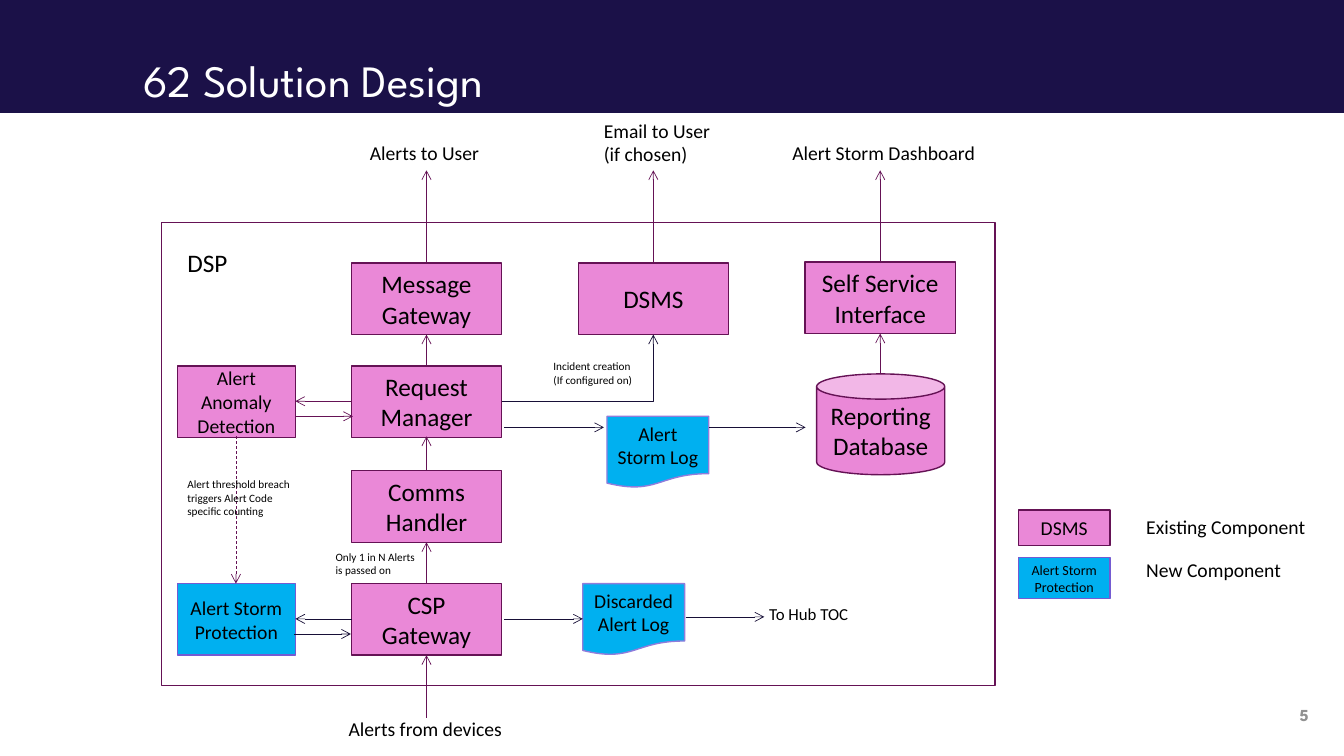
import pptx
import pptx.util
import pptx.dml.color
import pptx.enum.dml
import pptx.enum.shapes
import pptx.enum.text
import pptx.oxml
import pptx.oxml.ns
from dataclasses import dataclass

Inches = pptx.util.Inches
Shape = pptx.enum.shapes.MSO_SHAPE
Anchor = pptx.enum.text.MSO_ANCHOR
Align = pptx.enum.text.PP_ALIGN


@dataclass(frozen=True)
class Theme:
    heading: str = "League Spartan"
    body: str = "Calibri"
    banner: str = "1B1148"
    white: str = "FFFFFF"
    black: str = "000000"
    grey: str = "919191"
    existing: str = "EA88D7"
    new: str = "00B0F0"
    plum: str = "651255"
    navy: str = "170F37"
    violet: str = "745BD2"
    lilac: str = "907CDB"
    title: int = 32
    large: int = 18
    medium: int = 14
    small: int = 12
    legend: int = 10
    note: int = 8


theme = Theme()

TITLE = "62 Solution Design"
PAGE = "5"
COLUMNS = {"gateway": 4.23, "email": 6.48, "dashboard": 8.73}
MAIN_SIZE = (1.49, 0.71)
SIDE_SIZE = (1.17, 0.71)
LOG_SIZE = (1.01, 0.71)
SIDE_LEFT = 1.76
FRAME = (1.6, 2.21, 8.27, 4.59)

MAIN_COMPONENTS = [
    (["Message", "Gateway"], "gateway", 2.61),
    (["Request", "Manager"], "gateway", 3.63),
    (["Comms", "Handler"], "gateway", 4.67),
    (["CSP", "Gateway"], "gateway", 5.79),
    (["DSMS"], "email", 2.61),
    (["Self Service", "Interface"], "dashboard", 2.6),
]
SIDE_COMPONENTS = [
    (["Alert", "Anomaly Detection"], 3.63, theme.existing, theme.plum),
    (["Alert Storm", "Protection"], 5.79, theme.new, theme.violet),
]
LOGS = [
    (["Discarded Alert Log"], 5.78, 5.79),
    (["Alert Storm Log"], 6.02, 4.13),
]
DATABASE = (["Reporting", "Database"], (8.1, 3.71, 1.27, 1))
LEGEND = [
    (["DSMS"], (10.1, 5.06, 0.91, 0.35), theme.existing, theme.plum,
     theme.medium, "Existing Component", 5.06),
    (["Alert Storm", "Protection"], (10.1, 5.53, 0.91, 0.41), theme.new,
     theme.violet, theme.legend, "New Component", 5.49),
]
LABELS = [
    (["Alerts from devices"], (3.36, 7.06, 1.74, 0.34), theme.medium),
    (["Alerts to User"], (3.57, 1.35, 1.3, 0.34), theme.medium),
    (["Email to User", "(if chosen)"], (5.89, 1.13, 1.27, 0.57), theme.medium),
    (["Alert Storm Dashboard"], (7.76, 1.35, 2.03, 0.34), theme.medium),
    (["DSP"], (1.76, 2.4, 0.6, 0.4), theme.large),
    (["To Hub TOC"], (7.53, 5.94, 1, 0.3), theme.small),
    (["Only 1 in N Alerts", "is passed on"], (3.23, 5.41, 0.99, 0.37), theme.note),
    (["Alert threshold breach", "triggers Alert Code", "specific counting"],
     (1.76, 4.69, 1.23, 0.64), theme.note),
    (["Incident creation", "(If configured on)"], (5.39, 3.52, 0.99, 0.5), theme.note),
]
UPWARD_FLOWS = [
    ("gateway", 2.61, 1.69),
    ("gateway", 3.63, 3.32),
    ("gateway", 4.67, 4.33),
    ("gateway", 5.79, 5.38),
    ("gateway", 7.12, 6.5),
    ("email", 2.61, 1.69),
    ("dashboard", 2.6, 1.69),
    ("dashboard", 3.71, 3.31),
]
SIDEWAYS_FLOWS = [
    (3.49, 2.93, 3.98, theme.plum),
    (2.94, 3.5, 4.13, theme.plum),
    (3.49, 2.93, 6.14, theme.navy),
    (2.92, 3.48, 6.29, theme.navy),
    (5, 5.78, 6.14, theme.navy),
    (6.8, 7.58, 6.12, theme.navy),
    (5, 5.99, 4.24, theme.navy),
    (7.03, 7.99, 4.24, theme.navy),
]
ANOMALY_TRIGGER = (2.34, 4.33, 2.34, 5.79)
INCIDENT_FLOW = (4.98, 3.98, 6.48, 3.32)


def rgb(code):
    return pptx.dml.color.RGBColor.from_string(code)


def write(frame, lines, size, color=theme.black, font=theme.body,
          align=Align.LEFT, bold=False):
    for index, line in enumerate(lines):
        paragraph = frame.paragraphs[0] if index == 0 else frame.add_paragraph()
        paragraph.text = line
        paragraph.alignment = align
        paragraph.font.size = pptx.util.Pt(size)
        paragraph.font.name = font
        paragraph.font.bold = bold
        paragraph.font.color.rgb = rgb(color)


def clear_margins(frame):
    frame.margin_left = frame.margin_right = 0
    frame.margin_top = frame.margin_bottom = 0


def add_block(kind, box, fill=None, outline=None, lines=(), size=theme.large):
    block = slide.shapes.add_shape(kind, *map(Inches, box))
    block.shadow.inherit = False
    if fill:
        block.fill.solid()
        block.fill.fore_color.rgb = rgb(fill)
    else:
        block.fill.background()
    if outline:
        block.line.color.rgb = rgb(outline)
        block.line.width = pptx.util.Pt(1)
    else:
        block.line.fill.background()
    block.text_frame.word_wrap = True
    block.text_frame.vertical_anchor = Anchor.MIDDLE
    write(block.text_frame, lines, size, align=Align.CENTER)
    return block


def add_label(lines, box, size, wrap=False):
    label = slide.shapes.add_textbox(*map(Inches, box))
    label.text_frame.word_wrap = wrap
    label.text_frame.auto_size = pptx.enum.text.MSO_AUTO_SIZE.SHAPE_TO_FIT_TEXT
    write(label.text_frame, lines, size)


def add_flow(ends, color, dashed=False, bent=False):
    kinds = pptx.enum.shapes.MSO_CONNECTOR
    kind = kinds.ELBOW if bent else kinds.STRAIGHT
    flow = slide.shapes.add_connector(kind, *map(Inches, ends))
    flow.line.color.rgb = rgb(color)
    flow.line.width = pptx.util.Pt(0.5)
    if dashed:
        flow.line.dash_style = pptx.enum.dml.MSO_LINE.DASH
    properties = flow._element.spPr
    if bent:
        properties.find(pptx.oxml.ns.qn("a:prstGeom")).set("prst", "bentConnector2")
    arrow = pptx.oxml.parse_xml(f'<a:tailEnd {pptx.oxml.ns.nsdecls("a")} type="arrow"/>')
    flow.line._get_or_add_ln().append(arrow)
    properties.append(pptx.oxml.parse_xml(f'<a:effectLst {pptx.oxml.ns.nsdecls("a")}/>'))


deck = pptx.Presentation()
deck.slide_width, deck.slide_height = Inches(13.33), Inches(7.5)
slide = deck.slides.add_slide(deck.slide_layouts[5])

heading = slide.shapes.title
heading.left, heading.top, heading.width, heading.height = map(Inches, (1.42, 0.52, 9.34, 0.54))
clear_margins(heading.text_frame)
heading.text_frame.vertical_anchor = Anchor.TOP
write(heading.text_frame, [TITLE], theme.title, theme.white, theme.heading)
banner = add_block(Shape.RECTANGLE, (0, 0, 13.33, 1.12), theme.banner)
heading._element.addprevious(banner._element)

page_number = slide.shapes.add_textbox(*map(Inches, (12.14, 6.99, 0.84, 0.21)))
page_number.text_frame.word_wrap = True
page_number.text_frame.vertical_anchor = Anchor.MIDDLE
clear_margins(page_number.text_frame)
write(page_number.text_frame, [PAGE], theme.small, theme.grey, theme.heading, Align.RIGHT, True)

add_block(Shape.RECTANGLE, FRAME, outline=theme.plum)
for lines, column, top in MAIN_COMPONENTS:
    left = COLUMNS[column] - MAIN_SIZE[0] / 2
    add_block(Shape.RECTANGLE, (left, top, *MAIN_SIZE), theme.existing, theme.plum, lines)
for lines, top, fill, outline in SIDE_COMPONENTS:
    add_block(Shape.RECTANGLE, (SIDE_LEFT, top, *SIDE_SIZE), fill, outline, lines, theme.medium)
for lines, left, top in LOGS:
    add_block(Shape.FLOWCHART_DOCUMENT, (left, top, *LOG_SIZE), theme.new, theme.lilac,
              lines, theme.medium)
database_lines, database_box = DATABASE
add_block(Shape.CAN, database_box, theme.existing, theme.plum, database_lines)

for column, start, end in UPWARD_FLOWS:
    add_flow((COLUMNS[column], start, COLUMNS[column], end), theme.plum)
for start, end, height, color in SIDEWAYS_FLOWS:
    add_flow((start, height, end, height), color)
add_flow(ANOMALY_TRIGGER, theme.plum, dashed=True)
add_flow(INCIDENT_FLOW, theme.navy, bent=True)

for lines, box, size in LABELS:
    add_label(lines, box, size)
for lines, box, fill, outline, size, meaning, top in LEGEND:
    add_block(Shape.RECTANGLE, box, fill, outline, lines, size)
    add_label([meaning], (11.27, top, 1.93, 0.34), theme.medium, wrap=True)

deck.save("out.pptx")
